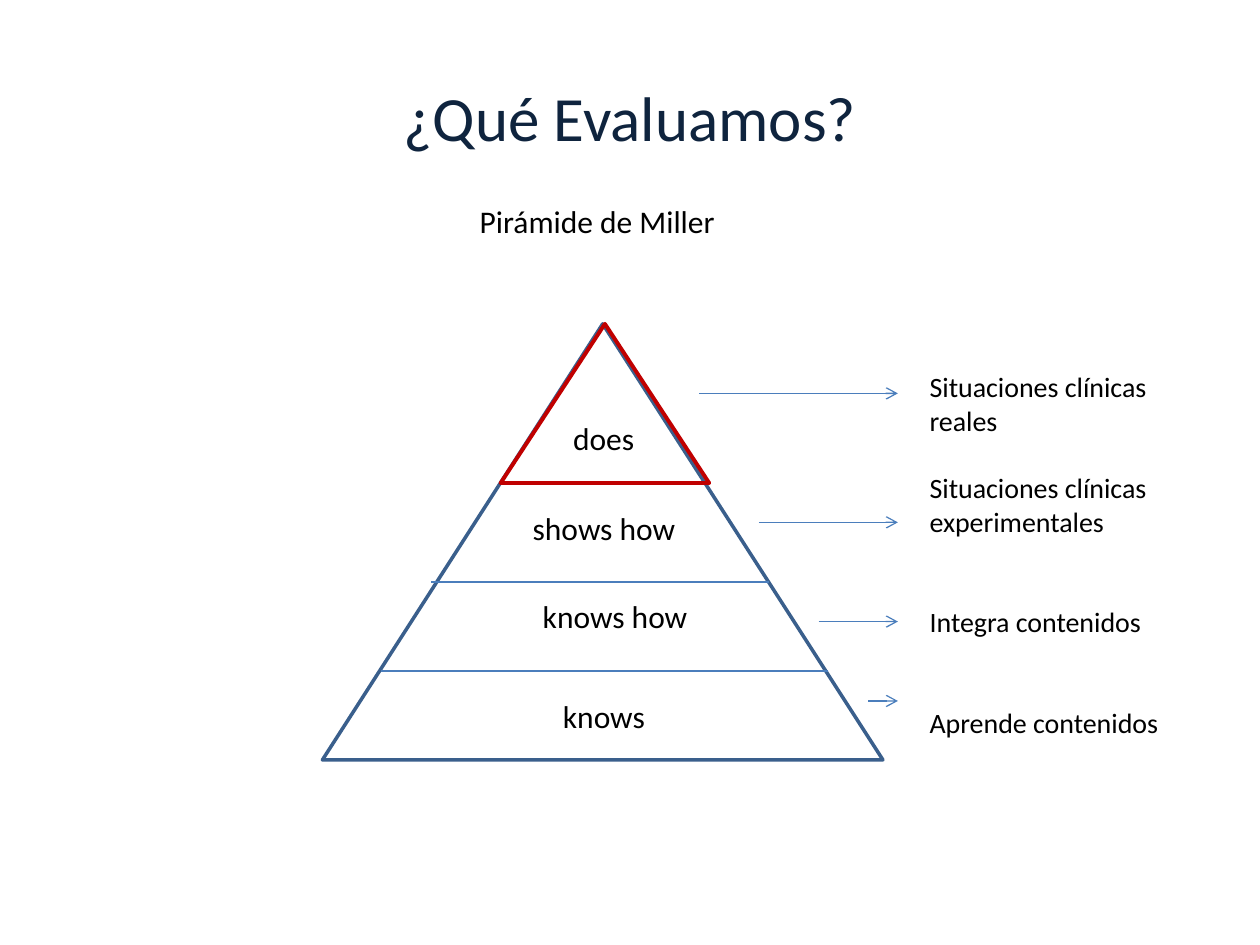
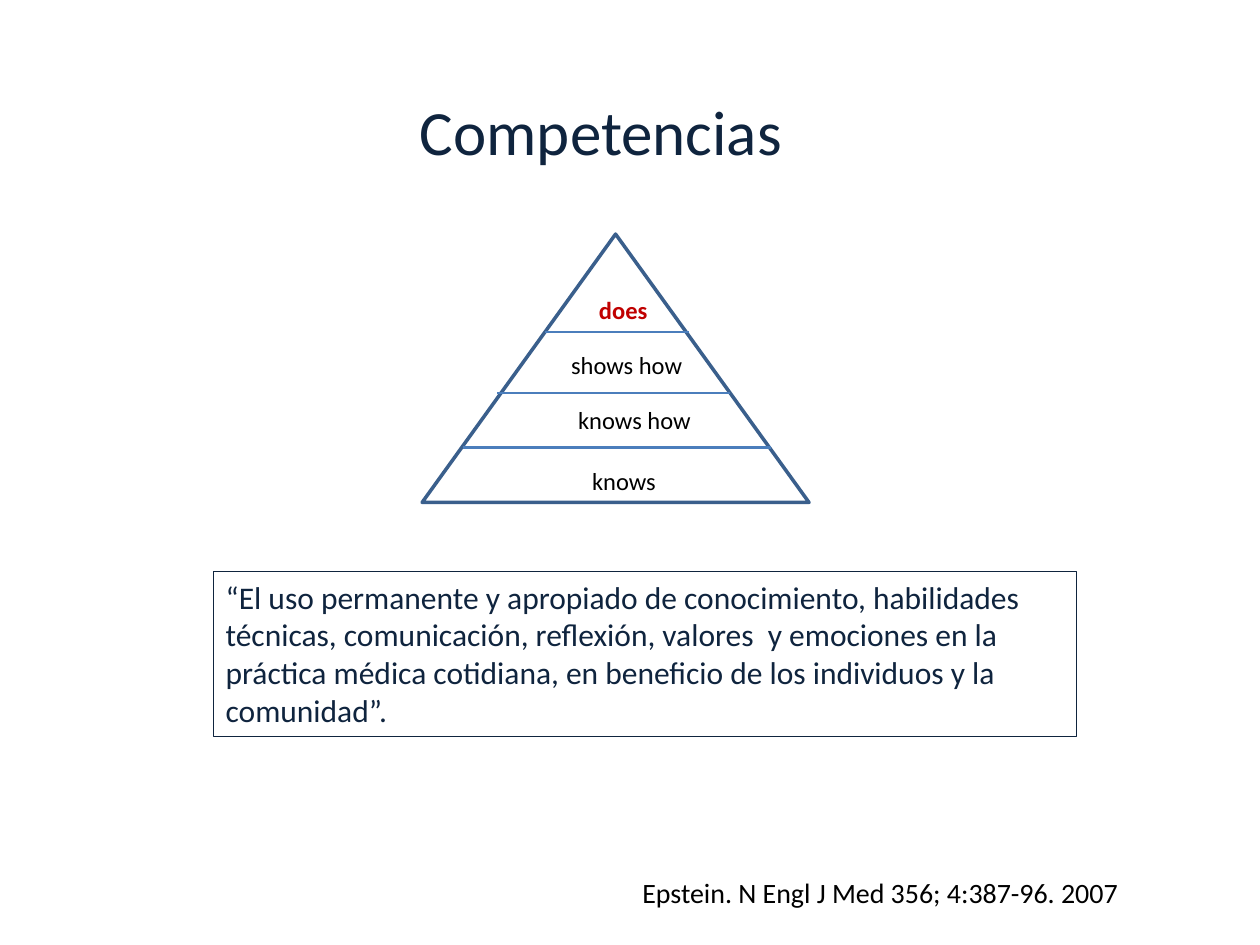
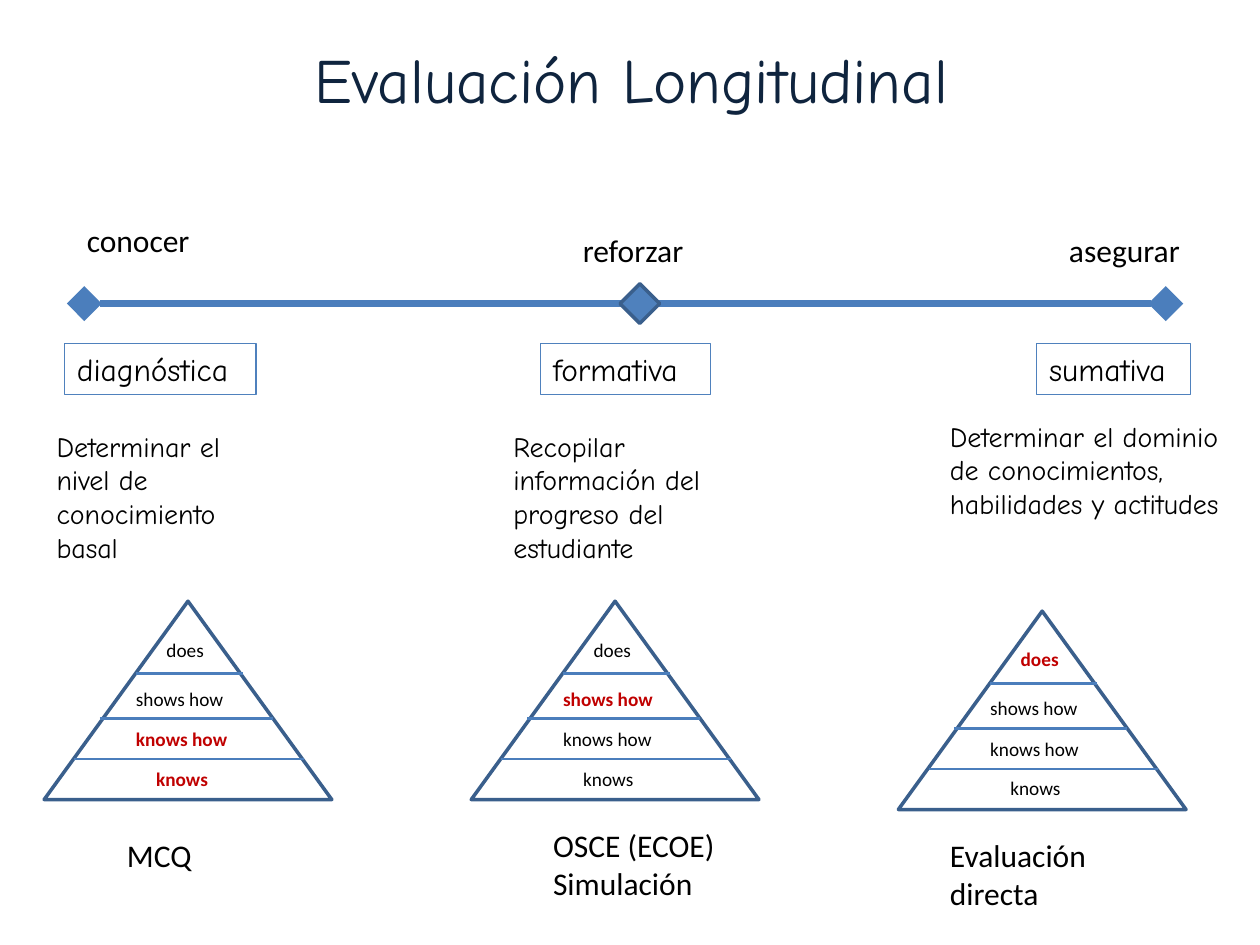
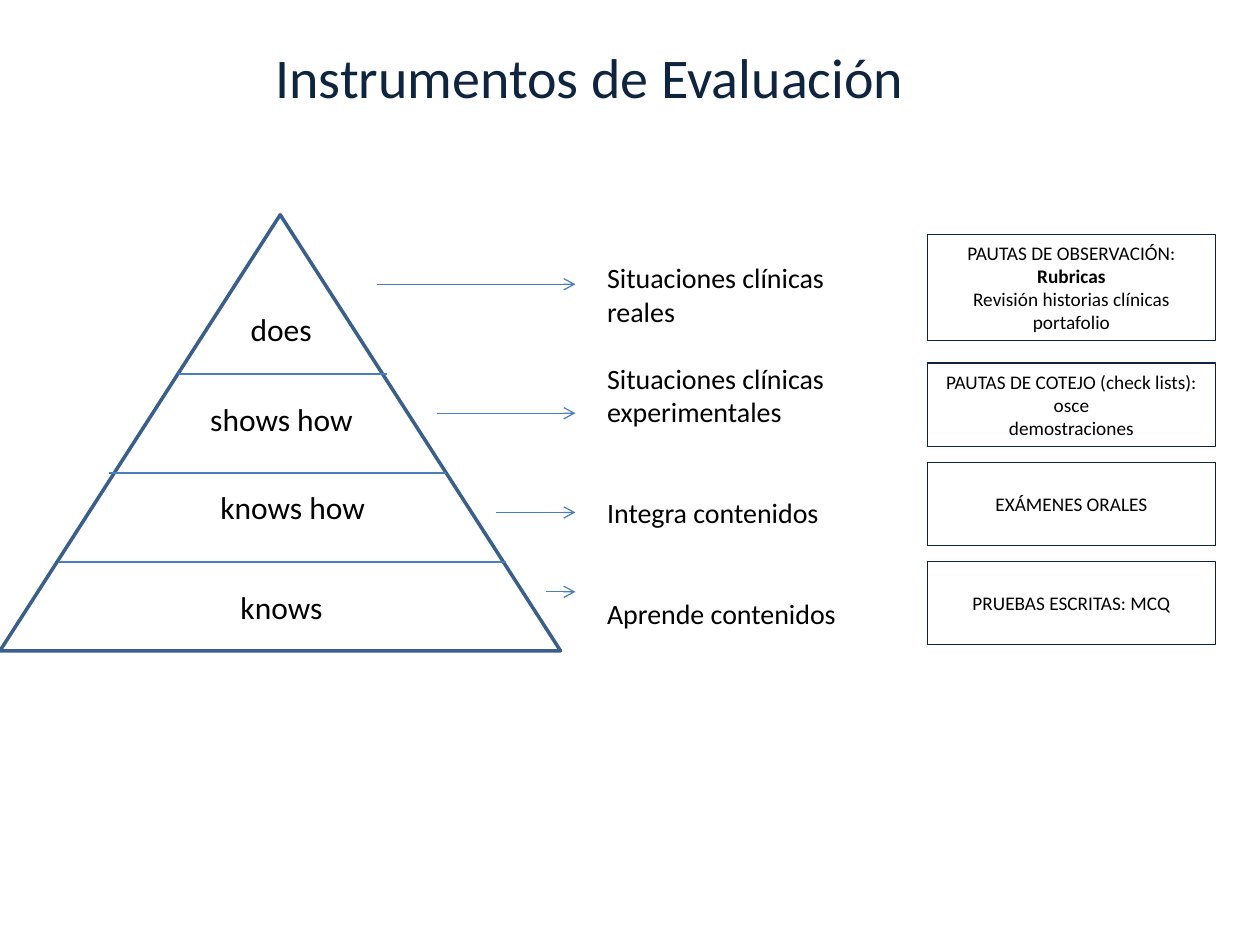
from dataclasses import dataclass

from lxml import etree
from pptx import Presentation
from pptx.dml.color import RGBColor
from pptx.enum.shapes import MSO_CONNECTOR, MSO_SHAPE
from pptx.enum.text import MSO_ANCHOR, PP_ALIGN
from pptx.oxml.ns import qn
from pptx.util import Cm, Pt

TRIANGLE = MSO_SHAPE.ISOSCELES_TRIANGLE
DIAMOND = MSO_SHAPE.DIAMOND
RECTANGLE = MSO_SHAPE.RECTANGLE
STRAIGHT = MSO_CONNECTOR.STRAIGHT
LEFT, CENTER = PP_ALIGN.LEFT, PP_ALIGN.CENTER
TOP, MIDDLE = MSO_ANCHOR.TOP, MSO_ANCHOR.MIDDLE


@dataclass(frozen=True)
class Theme:
    font: str = "Calibri"
    hand_font: str = "Comic Neue"
    navy: str = "0F243E"
    black: str = "000000"
    red: str = "C00000"
    outline: str = "3A5F8C"
    line: str = "4B7EBC"
    accent: str = "4F81BD"
    title: int = 36
    small_title: int = 32
    body: int = 18
    note: int = 16
    label: int = 14
    small: int = 11
    line_height: float = 1.2


THEME = Theme()

LEVELS = ("does", "shows how", "knows how", "knows")
EM_WIDTHS = (0.07, 0.17, 0.17, 0.1)
CUTS = ((0.365, 0.318, 0.69), (0.592, 0.194, 0.796), (0.796, 0.105, 0.902))
LABEL_SPOTS = ((0.425, 0.204), (0.353, 0.41), (0.371, 0.613), (0.407, 0.841))
SMALL_SPOTS = ((0.382, 0.153), (0.276, 0.4), (0.276, 0.605), (0.346, 0.803))
BIG_PYRAMID = (11.3, 8.79)
SITUATIONS = ("Situaciones clínicas reales", "Situaciones clínicas experimentales",
              "Integra contenidos", "Aprende contenidos")
SITUATION_ARROWS = ((7.6, 1.4), (8.8, 4), (10, 6), (11, 7.6))
ARROW_END = 11.6


def rgb(color):
    return RGBColor.from_string(color)


def write(shape, paras, size, color=THEME.black, font=THEME.font, align=LEFT,
          anchor=TOP, wrap=True, bold=(), gaps=()):
    frame = shape.text_frame
    frame.word_wrap = wrap
    frame.vertical_anchor = anchor
    for index, text in enumerate(paras):
        para = frame.paragraphs[0] if index == 0 else frame.add_paragraph()
        para.alignment = align
        if gaps:
            para.space_before = Pt(gaps[index] * size * THEME.line_height)
        span = para.add_run()
        span.text = text
        span.font.name = font
        span.font.size = Pt(size)
        span.font.bold = text in bold
        span.font.color.rgb = rgb(color)


def add_text(page, box, paras, size=THEME.body, **style):
    shape = page.shapes.add_textbox(*map(Cm, box))
    write(shape, paras, size, **style)


def add_title(page, box, text, size=THEME.title, **style):
    add_text(page, box, [text], size, color=THEME.navy, align=CENTER, **style)


def add_outline(page, kind, box, color, width, fill=None):
    shape = page.shapes.add_shape(kind, *map(Cm, box))
    shape.shadow.inherit = False
    if fill:
        shape.fill.solid()
        shape.fill.fore_color.rgb = rgb(fill)
    else:
        shape.fill.background()
    shape.line.color.rgb = rgb(color)
    shape.line.width = Pt(width)
    return shape


def add_panel(page, box, paras, size, border=THEME.navy, **style):
    panel = add_outline(page, RECTANGLE, box, border, 0.75)
    write(panel, paras, size, **style)


def add_line(page, start, end, width, head=None, tail=None, end_size="med"):
    line = page.shapes.add_connector(STRAIGHT, *map(Cm, (*start, *end)))
    line.line.color.rgb = rgb(THEME.line)
    line.line.width = Pt(width)
    stroke = line.line._get_or_add_ln()
    for tag, kind in (("a:headEnd", head), ("a:tailEnd", tail)):
        if kind:
            etree.SubElement(stroke, qn(tag), type=kind, w=end_size, len=end_size)
    etree.SubElement(line._element.spPr, qn("a:effectLst"))


def add_pyramid(page, left, top, size, text_size, spots=LABEL_SPOTS, marked=()):
    width, height = size
    add_outline(page, TRIANGLE, (left, top, width, height), THEME.outline, 2)
    for depth, start, end in CUTS:
        y = top + depth * height
        add_line(page, (left + start * width, y), (left + end * width, y), 1.5)
    for level, em_width, (x, y) in zip(LEVELS, EM_WIDTHS, spots):
        box = (left + x * width, top + y * height,
               0.65 + em_width * text_size, 0.25 + 0.043 * text_size)
        color = THEME.red if level in marked else THEME.black
        add_text(page, box, [level], text_size, color=color, wrap=False, bold=marked)


def add_situations(page, left, top):
    add_text(page, (left + 11.99, top + 0.8, 6, 8.56), SITUATIONS, THEME.note,
             gaps=(0, 1, 2, 2))
    for x, y in SITUATION_ARROWS:
        add_line(page, (left + x, top + y), (left + ARROW_END, top + y), 0.75,
                 tail="arrow")


def build_miller(page):
    left, top = 6.5, 6.53
    width, height = BIG_PYRAMID
    add_title(page, (1.27, 0.76, 22.86, 3.18), "¿Qué Evaluamos?", anchor=MIDDLE)
    add_text(page, (9.42, 3.94, 5.49, 1.02), ["Pirámide de Miller"], wrap=False)
    add_pyramid(page, left, top, BIG_PYRAMID, THEME.body)
    depth, start, end = CUTS[0]
    tip = (left + start * width, top, (end - start) * width, depth * height)
    add_outline(page, TRIANGLE, tip, THEME.red, 2.25)
    add_situations(page, left, top)


def build_competences(page):
    add_title(page, (0.71, 1.75, 22.81, 2.97), "Competencias")
    add_pyramid(page, 8.51, 4.72, (7.8, 5.41), THEME.label, marked=("does",))
    quote = ("“El uso permanente y apropiado de conocimiento, habilidades técnicas, "
             "comunicación, reflexión, valores  y emociones en la práctica médica "
             "cotidiana, en beneficio de los individuos y la comunidad”.")
    add_panel(page, (4.3, 11.52, 17.4, 3.33), [quote], THEME.body, color=THEME.navy)
    add_text(page, (12.7, 17.53, 12.14, 0.94),
             ["Epstein. N Engl J Med 356; 4:387-96. 2007"], THEME.note, wrap=False)


def build_longitudinal(page):
    hand = THEME.hand_font
    add_title(page, (1.3, 0, 22.86, 3.15), "Evaluación Longitudinal", font=hand,
              anchor=MIDDLE)
    add_line(page, (1.7, 6.12), (23.5, 6.12), 4, head="diamond", tail="diamond",
             end_size="lg")
    add_outline(page, DIAMOND, (12.5, 5.72, 0.8, 0.8), THEME.outline, 2, THEME.accent)

    aims = (("conocer", 1.5, 4.33, 3.81), ("reforzar", 11.5, 4.53, 2.57),
            ("asegurar", 21.3, 4.53, 2.77))
    for text, left, top, width in aims:
        add_text(page, (left, top, width, 1.02), [text], wrap=False)

    stages = (("diagnóstica", 1.3, 3.86), ("formativa", 10.9, 3.43),
              ("sumativa", 20.9, 3.1))
    for text, left, width in stages:
        add_panel(page, (left, 6.93, width, 1.02), [text], THEME.body,
                  border=THEME.accent, font=hand, wrap=False)

    purposes = (
        ("Determinar el nivel de conocimiento basal", 0.89, 8.53, 4.8),
        ("Recopilar información del progreso del estudiante", 10.1, 8.53, 5.2),
        ("Determinar el dominio de conocimientos, habilidades y actitudes",
         18.9, 8.33, 6))
    for text, left, top, width in purposes:
        add_text(page, (left, top, width, 3.76), [text], THEME.note, font=hand)

    marks = (("knows how", "knows"), ("shows how",), ("does",))
    for index, (top, marked) in enumerate(zip((12.12, 12.12, 12.32), marks)):
        add_pyramid(page, 0.89 + 8.61 * index, top, (5.8, 4), THEME.small,
                    SMALL_SPOTS, marked)

    methods = ((["MCQ"], 2.31, 16.73, 2.03),
               (["OSCE (ECOE)", "Simulación"], 10.9, 16.53, 3.81),
               (["Evaluación directa"], 18.9, 16.73, 4))
    for paras, left, top, width in methods:
        add_text(page, (left, top, width, 1.8), paras)


def build_instruments(page):
    left, top = 0, 4.33
    add_pyramid(page, left, top, BIG_PYRAMID, THEME.body)
    add_situations(page, left, top)
    panels = (
        (4.73, 2.13, ["PAUTAS DE OBSERVACIÓN:", "Rubricas",
                      "Revisión historias clínicas", "portafolio"]),
        (7.32, 1.68, ["PAUTAS DE COTEJO (check lists):", "osce", "demostraciones"]),
        (9.32, 1.68, ["EXÁMENES ORALES"]),
        (11.32, 1.68, ["PRUEBAS ESCRITAS: MCQ"]))
    for y, height, paras in panels:
        add_panel(page, (18.7, y, 5.8, height), paras, THEME.small, align=CENTER,
                  anchor=MIDDLE, bold=("Rubricas",))
    add_title(page, (5.29, 0.74, 13.2, 1.63), "Instrumentos de Evaluación",
              THEME.small_title, wrap=False)


def main():
    deck = Presentation()
    deck.slide_width, deck.slide_height = Cm(25.4), Cm(19.05)
    blank = deck.slide_layouts[6]
    for build in (build_miller, build_competences, build_longitudinal,
                  build_instruments):
        build(deck.slides.add_slide(blank))
    deck.save("out.pptx")


if __name__ == "__main__":
    main()
